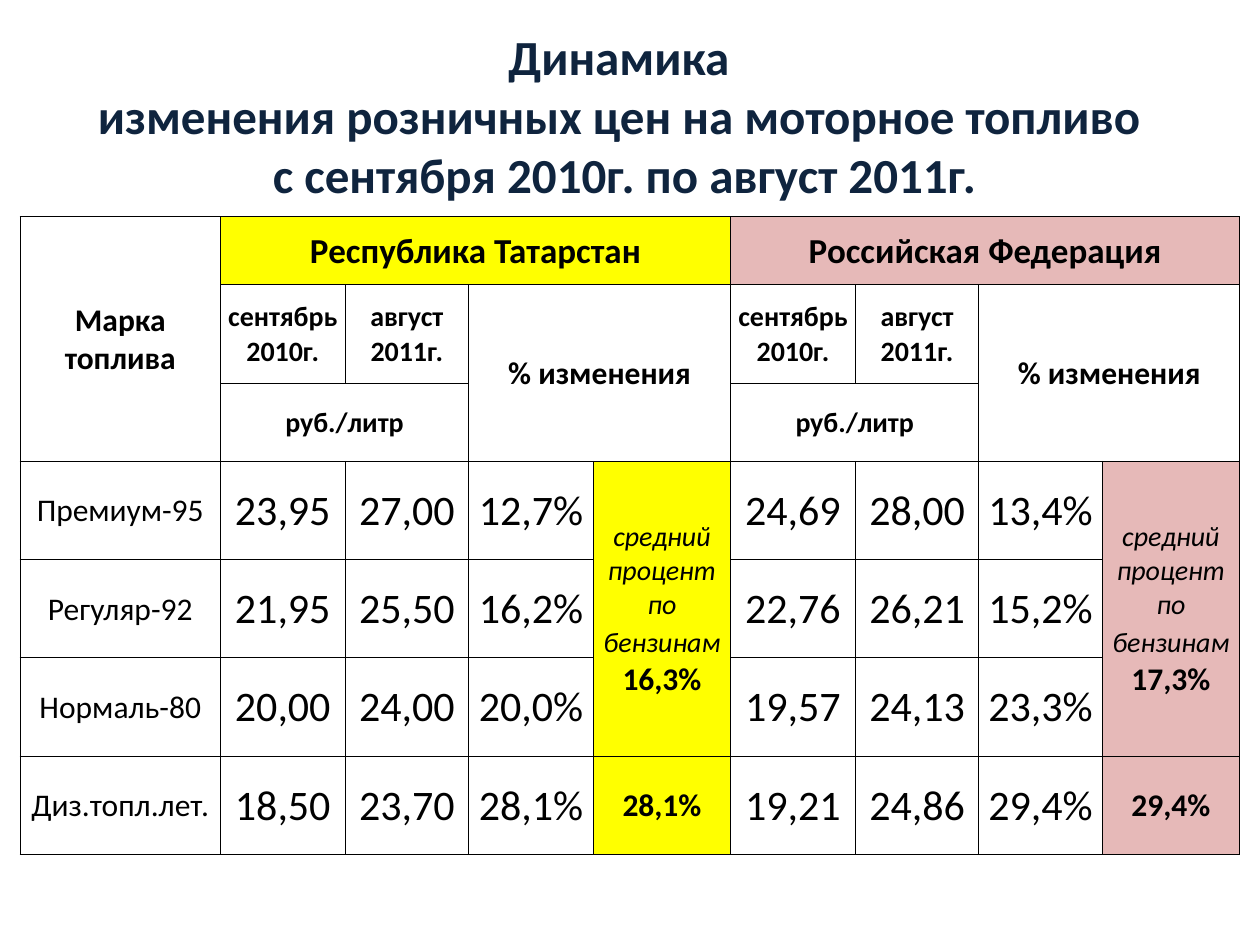
from lxml.etree import SubElement as Sub
from pptx import Presentation
from pptx.dml.color import RGBColor as Color
from pptx.enum.text import MSO_ANCHOR as Anchor, MSO_AUTO_SIZE as Auto, PP_ALIGN as Align
from pptx.oxml.ns import qn
from pptx.util import Inches, Pt

INK, NAVY = "000000", "0F243E"
TITLE = [
    "Динамика ",
    "изменения розничных цен на моторное топливо ",
    "с сентября 2010г. по август 2011г.",
]
WIDTHS = [1.59, 0.99, 0.98, 0.99, 1.09, 0.99, 0.98, 0.98, 1.09]
HEIGHTS = [0.54, 0.78, 0.4] + [0.78] * 4
FUELS = ["Премиум-95", "Регуляр-92", "Нормаль-80", "Диз.топл.лет."]
AREAS = [
    ("Республика Татарстан", "FFFF00", "16,3%", [
        ("23,95", "27,00", "12,7%"),
        ("21,95", "25,50", "16,2%"),
        ("20,00", "24,00", "20,0%"),
        ("18,50", "23,70", "28,1%"),
    ]),
    ("Российская Федерация", "E6B9B8", "17,3%", [
        ("24,69", "28,00", "13,4%"),
        ("22,76", "26,21", "15,2%"),
        ("19,57", "24,13", "23,3%"),
        ("19,21", "24,86", "29,4%"),
    ]),
]


def paint(target, hue):
    target.solid()
    target.fore_color.rgb = Color.from_string(hue)


def add_run(para, text, size, bold=False, slant=False, hue=INK):
    para.alignment = Align.CENTER
    run = para.add_run()
    run.text = text
    font = run.font
    font.name, font.size = "Calibri", Pt(size)
    font.bold, font.italic = bold, slant
    paint(font.fill, hue)


def add_title(slide):
    box = slide.shapes.add_textbox(Inches(0.23), Inches(0.16), Inches(9.45), Inches(1.51))
    frame = box.text_frame
    frame.word_wrap = True
    frame.auto_size = Auto.SHAPE_TO_FIT_TEXT
    for i, line in enumerate(TITLE):
        para = frame.add_paragraph() if i else frame.paragraphs[0]
        add_run(para, line, 28, True, hue=NAVY)


def style_cell(cell):
    cell.vertical_anchor = Anchor.MIDDLE
    cell.margin_left = cell.margin_top = cell.margin_right = Inches(0.01)
    cell.margin_bottom = 0
    props = cell._tc.get_or_add_tcPr()
    for side in "LRTB":
        line = Sub(props, qn(f"a:ln{side}"), w=str(Pt(0.5)))
        fill = Sub(line, qn("a:solidFill"))
        Sub(fill, qn("a:srgbClr"), val=INK)
    cell.fill.background()


def add_grid(slide):
    frame = slide.shapes.add_table(
        len(HEIGHTS), len(WIDTHS), Inches(0.16), Inches(1.72),
        Inches(sum(WIDTHS)), Inches(sum(HEIGHTS)))
    grid = frame.table
    grid.first_row = grid.horz_banding = False
    for col, width in zip(grid.columns, WIDTHS):
        col.width = Inches(width)
    for row, height in zip(grid.rows, HEIGHTS):
        row.height = Inches(height)
    for cell in grid.iter_cells():
        style_cell(cell)
    return grid


def put(grid, row, col, *runs, span=(1, 1), hue=None):
    cell = grid.cell(row, col)
    if span != (1, 1):
        cell.merge(grid.cell(row + span[0] - 1, col + span[1] - 1))
    if hue:
        paint(cell.fill, hue)
    for run in runs:
        add_run(cell.text_frame.paragraphs[0], *run)


def add_area(grid, col, name, hue, mean, rows):
    put(grid, 0, col, (name, 20, True), span=(1, 4), hue=hue)
    put(grid, 1, col, ("сентябрь 2010г.", 16, True))
    put(grid, 1, col + 1, ("август 2011г.", 16, True))
    put(grid, 1, col + 2, ("% изменения", 18, True), span=(2, 2))
    put(grid, 2, col, ("руб./литр", 16, True), span=(1, 2))
    for i, row in enumerate(rows, 3):
        for j, value in enumerate(row, col):
            put(grid, i, j, (value, 24))
    put(grid, 3, col + 3, ("средний процент по бензинам", 16, False, True),
        (f" {mean}", 18, True), span=(3, 1), hue=hue)
    put(grid, 6, col + 3, (rows[-1][-1], 18, True), hue=hue)


def main():
    deck = Presentation()
    deck.slide_width, deck.slide_height = Inches(10), Inches(7.5)
    slide = deck.slides.add_slide(deck.slide_layouts[6])
    grid = add_grid(slide)
    put(grid, 0, 0, ("Марка топлива", 18, True), span=(3, 1))
    for i, fuel in enumerate(FUELS, 3):
        put(grid, i, 0, (fuel, 18))
    for i, area in enumerate(AREAS):
        add_area(grid, 1 + 4 * i, *area)
    add_title(slide)
    deck.save("out.pptx")


if __name__ == "__main__":
    main()
